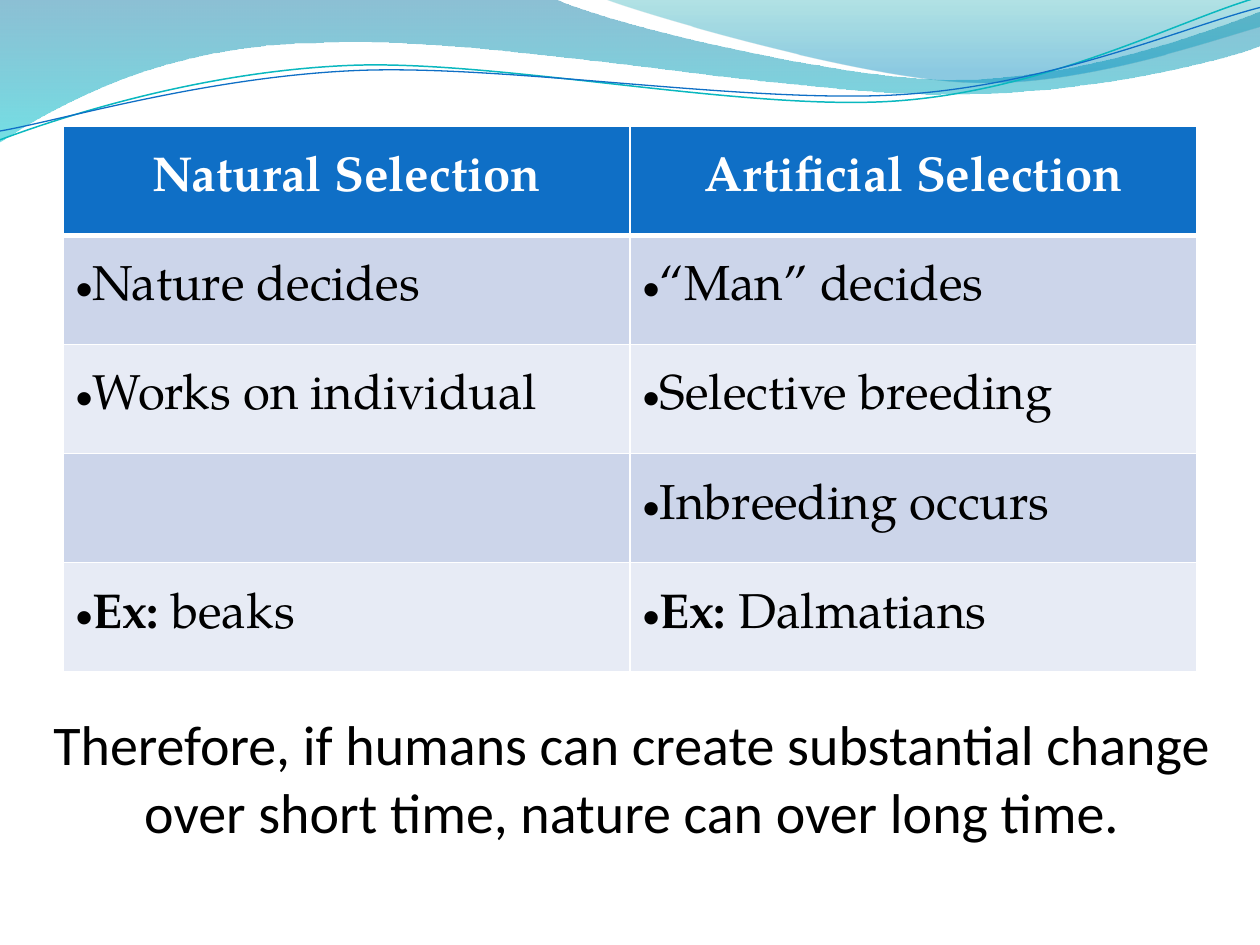
from math import cos, radians, sin

from lxml import etree
from pptx import Presentation
from pptx.dml.color import RGBColor
from pptx.enum.text import MSO_ANCHOR, PP_ALIGN
from pptx.oxml import parse_xml
from pptx.oxml.ns import qn
from pptx.util import Pt

CENTER, LEFT = PP_ALIGN.CENTER, PP_ALIGN.LEFT
TOP, MIDDLE = MSO_ANCHOR.TOP, MSO_ANCHOR.MIDDLE
NAMESPACE = "http://schemas.openxmlformats.org/drawingml/2006/main"
TILT = 2.7
COLORS = {
    "header": "0F6FC6", "odd_row": "CCD5EA", "even_row": "E7EBF5",
    "white": "FFFFFF", "black": "000000", "teal_line": "0AB8BF",
    "deep_blue": "0074A1", "aqua": "00C6CF", "teal": "00A1A9", "sky": "008BBF",
}


def rgb(name):
    return RGBColor.from_string(COLORS[name])


def add_wave(shapes, start, segments, closed):
    points = [start] + [point for segment in segments for point in segment]
    vertices = [(Pt(x), Pt(y)) for x, y in points]
    builder = shapes.build_freeform(*vertices[0], scale=1.0)
    builder.add_line_segments(vertices[1:], close=closed)
    wave = builder.convert_to_shape()
    wave.shadow.inherit = False
    straight_parts = iter(list(wave.element.iter(qn("a:lnTo"))))
    for segment in segments:
        parts = [next(straight_parts) for _ in segment]
        if len(parts) == 3:
            curve = etree.Element(qn("a:cubicBezTo"))
            parts[0].addprevious(curve)
            for part in parts:
                curve.append(part[0])
                part.getparent().remove(part)
    return wave


prs = Presentation()
prs.slide_width, prs.slide_height = Pt(720), Pt(540)
slide = prs.slides.add_slide(prs.slide_layouts[5])
shapes = slide.shapes

bands = [
    ((0, -0.7), [
        [(316.8, -0.7)],
        [(342.7, 12.2), (478.1, 45.4), (545.8, 45.4)],
        [(614.2, 45.4), (689.8, 18.7), (720, 6.5)],
        [(720.7, 25.9)],
        [(707.8, 31.7), (626.4, 54.7), (537.1, 54)],
        [(447.8, 54), (275, 20.2), (185, 24.5)],
        [(92.9, 25.2), (33.1, 59.8), (-0.7, 81.4)],
        [(0, -0.7)],
    ], [(0, "deep_blue", 45), (100, "aqua", 55)]),
    ((344.9, -0.7), [
        [(366.5, 7.9), (491, 44.6), (553.7, 46.8)],
        [(616.3, 49.7), (691.9, 23), (720, 15.1)],
        [(720, 0)],
        [(344.9, -0.7)],
    ], [(0, "teal", 30), (80, "sky", 45)]),
]
for start, segments, stops in bands:
    band = add_wave(shapes, start, segments, True)
    band.line.fill.background()
    band.fill.gradient()
    gradient = band.element.spPr.find(qn("a:gradFill"))
    stop_xml = "".join(
        f'<a:gs pos="{position * 1000}"><a:srgbClr val="{COLORS[color]}">'
        f'<a:alpha val="{opacity * 1000}"/></a:srgbClr></a:gs>'
        for position, color, opacity in stops)
    gradient.getparent().replace(gradient, parse_xml(
        f'<a:gradFill xmlns:a="{NAMESPACE}" rotWithShape="1"><a:gsLst>{stop_xml}</a:gsLst>'
        '<a:lin ang="5400000" scaled="0"/></a:gradFill>'))

strands = [
    ((0, 79.9), [
        [(34.6, 67), (113.8, 41), (199.4, 37.4)],
        [(284.4, 33.8), (427, 64.1), (513.4, 57.6)],
        [(599.8, 51.1), (675.4, 10.8), (718.6, -1.4)],
    ], (359.3, 41.4), "teal_line", 0.85),
    ((0, 74.9), [
        [(33.8, 69.1), (118.1, 43.9), (203.8, 40.3)],
        [(290.2, 36.7), (429.8, 59.8), (516.2, 54)],
        [(602.6, 48.2), (677.5, 15.1), (720, 4.3)],
    ], (359.6, 42.5), "header", 0.75),
]
cosine, sine = cos(radians(TILT)), sin(radians(TILT))
for start, segments, (center_x, center_y), color, weight in strands:
    level_start, *level_segments = [
        [(center_x + (x - center_x) * cosine - (y - center_y) * sine,
          center_y + (x - center_x) * sine + (y - center_y) * cosine)
         for x, y in segment]
        for segment in [[start], *segments]]
    strand = add_wave(shapes, level_start[0], level_segments, False)
    strand.rotation = 360 - TILT
    strand.fill.background()
    strand.line.color.rgb = rgb(color)
    strand.line.width = Pt(weight)

conclusion = shapes.title
conclusion.element.getparent().append(conclusion.element)
for name, value in {"left": 1.2, "top": 402, "width": 720, "height": 113.8}.items():
    setattr(conclusion, name, Pt(value))
frame = conclusion.text_frame
frame.text = ("Therefore, if humans can create substantial change "
              "over short time, nature can over long time.")
for name, value in {"margin_left": Pt(0), "margin_top": Pt(3.6), "margin_right": Pt(0),
                    "margin_bottom": Pt(0), "word_wrap": True,
                    "vertical_anchor": TOP}.items():
    setattr(frame, name, value)
frame.paragraphs[0].alignment = CENTER
font = frame.paragraphs[0].runs[0].font
for name, value in {"name": "Calibri", "size": Pt(32), "bold": False}.items():
    setattr(font, name, value)
font.color.rgb = rgb("black")

comparison = [
    ([("Natural Selection", True)], [("Artificial Selection", True)]),
    ([("Nature decides", False)], [("“Man” decides", False)]),
    ([("Works on individual", False)], [("Selective breeding", False)]),
    ([], [("Inbreeding occurs", False)]),
    ([("Ex: ", True), ("beaks", False)], [("Ex:", True), (" Dalmatians", False)]),
]
table = shapes.add_table(len(comparison), 2, Pt(36), Pt(72), Pt(648), Pt(312)).table
for column in table.columns:
    column.width = Pt(324)
for row_index, row in enumerate(comparison):
    table.rows[row_index].height = Pt(62.4)
    is_header = row_index == 0
    row_color = "header" if is_header else ("even_row", "odd_row")[row_index % 2]
    border_widths = {"L": 1, "R": 1, "T": 3 if row_index == 1 else 1, "B": 3 if is_header else 1}
    for column_index, runs in enumerate(row):
        cell = table.cell(row_index, column_index)
        cell.vertical_anchor = MIDDLE
        properties = cell._tc.get_or_add_tcPr()
        for side, weight in border_widths.items():
            border = etree.SubElement(properties, qn(f"a:ln{side}"), w=str(Pt(weight)))
            border_fill = etree.SubElement(border, qn("a:solidFill"))
            etree.SubElement(border_fill, qn("a:srgbClr"), val=COLORS["white"])
        cell.fill.solid()
        cell.fill.fore_color.rgb = rgb(row_color)
        paragraph = cell.text_frame.paragraphs[0]
        paragraph.alignment = CENTER if is_header else LEFT
        if runs and not is_header:
            bullet_properties = paragraph._p.get_or_add_pPr()
            etree.SubElement(bullet_properties, qn("a:buFont"), typeface="Arial")
            etree.SubElement(bullet_properties, qn("a:buChar"), char="•")
        for text, bold in runs:
            run = paragraph.add_run()
            run.text = text
            for name, value in {"name": "TeX Gyre Pagella", "size": Pt(28), "bold": bold}.items():
                setattr(run.font, name, value)
            run.font.color.rgb = rgb("white" if is_header else "black")

prs.save("out.pptx")
